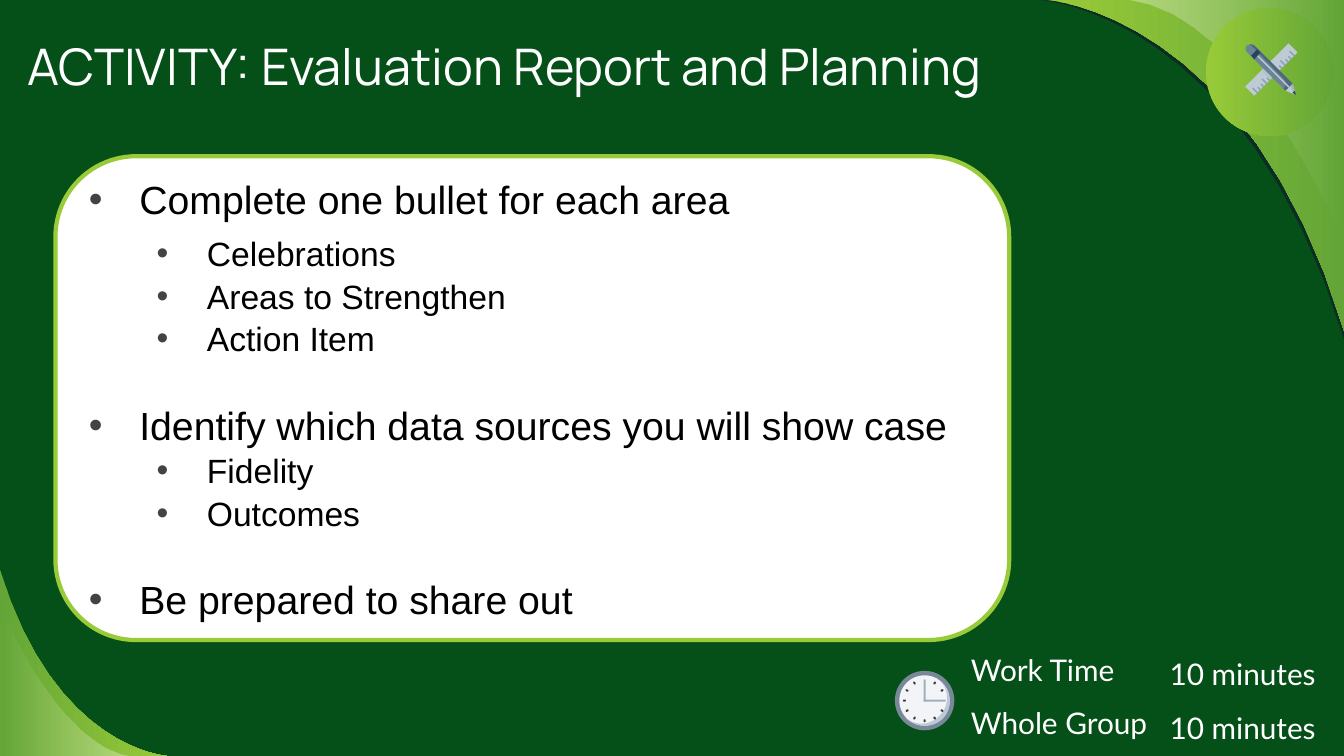
"""Build the activity slide with its task list, timing notes and icons."""
from lxml import etree
from math import cos, radians, sin
from pptx import Presentation
from pptx.dml.color import RGBColor
from pptx.enum.shapes import MSO_SHAPE
from pptx.enum.text import MSO_ANCHOR, MSO_AUTO_SIZE, PP_ALIGN
from pptx.oxml.ns import qn
from pptx.util import Inches, Pt

ELLIPSE, ROUNDED = MSO_SHAPE.OVAL, MSO_SHAPE.ROUNDED_RECTANGLE
TOP, MIDDLE = MSO_ANCHOR.TOP, MSO_ANCHOR.MIDDLE
LEFT, NO_AUTOFIT = PP_ALIGN.LEFT, MSO_AUTO_SIZE.NONE
WHITE, LIME, LEAF = "FFFFFF", "99CB38", "63A537"
CURVE_STEPS = 16


def paint(shape, colours, opacities=()):
    """Fill a shape with one colour or a left-to-right gradient, without an outline."""
    shape.shadow.inherit = False
    shape.line.fill.background()
    if len(colours) == 1:
        shape.fill.solid()
        shape.fill.fore_color.rgb = RGBColor.from_string(colours[0])
    else:
        shape.fill.gradient()
        shape.fill.gradient_angle = 0
        for stop, colour in zip(shape.fill.gradient_stops, colours):
            stop.color.rgb = RGBColor.from_string(colour)
    for colour_element, opacity in zip(shape.element.spPr.iter(qn("a:srgbClr")), opacities):
        etree.SubElement(colour_element, qn("a:alpha"), val=str(opacity * 1000))


def draw_outline(segments, colours, opacities=()):
    """Draw a closed outline from points (x, y) and cubic curves (x1, y1, x2, y2, x, y)."""
    points = [segments[0]]
    for segment in segments[1:]:
        if len(segment) == 2:
            points.append(segment)
            continue
        start, first, second, end = points[-1], segment[:2], segment[2:4], segment[4:]
        for step in range(1, CURVE_STEPS + 1):
            t = step / CURVE_STEPS
            points.append(tuple(
                (1 - t) ** 3 * a + 3 * (1 - t) ** 2 * t * b + 3 * (1 - t) * t ** 2 * c + t ** 3 * d
                for a, b, c, d in zip(start, first, second, end)))
    vertices = [(Inches(x), Inches(y)) for x, y in points]
    builder = slide.shapes.build_freeform(*vertices[0])
    builder.add_line_segments(vertices[1:], close=True)
    paint(builder.convert_to_shape(), colours, opacities)


presentation = Presentation()
presentation.slide_width, presentation.slide_height = Inches(13.33), Inches(7.5)
slide = presentation.slides.add_slide(presentation.slide_layouts[5])
slide.background.fill.solid()
slide.background.fill.fore_color.rgb = RGBColor.from_string("045018")

corner_swooshes = [
    ([(13.33, 3.37), (12.35, 0.11, 10.31, 0, 10.31, 0), (13.33, 0)], ["12102F"], [54]),
    ([(10.38, 0), (10.38, 0, 12.38, 0.11, 13.33, 3.28), (13.33, 0)], [LIME, LEAF], []),
    ([(13.33, 2.44), (13.33, 2.44, 12.42, 0.15, 11.18, 0), (13.33, 0)], [WHITE, WHITE], [36, 0]),
    ([(1.66, 7.5), (1.66, 7.5, 0.54, 7.44, 0, 5.65), (0, 7.5)], [LEAF, LIME], []),
    ([(0, 6.01), (0, 6.01, 0.56, 7.41, 1.32, 7.5), (0, 7.5)], [WHITE, WHITE], [0, 36]),
]
for segments, colours, opacities in corner_swooshes:
    draw_outline(segments, colours, opacities)

title = slide.shapes.title
title.left, title.top, title.width, title.height = Inches(0.17), Inches(0.25), Inches(11.46), Inches(0.92)
title_frame = title.text_frame
title_frame.text = "ACTIVITY: Evaluation Report and Planning"
title_frame.auto_size = NO_AUTOFIT
title_frame.vertical_anchor = TOP
title_frame.margin_top = title_frame.margin_bottom = Inches(0.1)
paragraph = title_frame.paragraphs[0]
paragraph.alignment = LEFT
paragraph.font.name, paragraph.font.size = "Manrope", Pt(36)
paragraph.font.color.rgb = RGBColor.from_string(WHITE)

badge = slide.shapes.add_shape(ELLIPSE, Inches(11.96), Inches(0.08), Inches(1.27), Inches(1.27))
paint(badge, [LIME, LEAF])

ruler = [(12.78, 0.43), (12.36, 0.85), (12.35, 0.86, 12.35, 0.87, 12.36, 0.87), (12.43, 0.94),
         (12.43, 0.95, 12.45, 0.95, 12.45, 0.94), (12.86, 0.53),
         (12.87, 0.52, 12.87, 0.51, 12.86, 0.51), (12.79, 0.44)]
draw_outline(ruler, ["BECBD5"])
for mark in range(13):
    x, y = 12.43 + 0.0305 * mark, 0.87 - 0.0305 * mark
    inset = 0.02 if mark % 3 else 0
    draw_outline([(x + inset, y + inset), (x + inset - 0.01, y + inset + 0.01),
                  (x + 0.04, y + 0.06), (x + 0.05, y + 0.05)], ["88A1B4"])

pencil_tip = (12.85, 0.94, 12.86, 0.93, 12.85, 0.93)
pencil_parts = [
    ([(12.58, 0.63), (12.51, 0.7), (12.6, 0.79), (12.67, 0.72)], "B2C2CE"),
    ([(12.41, 0.44), (12.39, 0.44, 12.38, 0.45, 12.37, 0.45), (12.35, 0.47, 12.35, 0.5, 12.37, 0.52),
      (12.75, 0.9), (12.82, 0.83), (12.44, 0.45)], "6B8397"),
    ([(12.82, 0.83), (12.75, 0.9), (12.85, 0.94), pencil_tip], "BECBD5"),
    ([(12.82, 0.83), (12.8, 0.85), (12.83, 0.93), (12.85, 0.94), pencil_tip], "9FB3C2"),
    ([(12.41, 0.44), (12.39, 0.44), (12.41, 0.45), (12.73, 0.78), (12.76, 0.81, 12.76, 0.85, 12.73, 0.88),
      (12.75, 0.9), (12.82, 0.83), (12.44, 0.45)], "4E677C"),
    ([(12.84, 0.9), (12.82, 0.92), (12.85, 0.94), pencil_tip], "29435D"),
    ([(12.47, 0.49), (12.41, 0.55), (12.44, 0.59), (12.5, 0.52)], "29435D"),
    ([(12.48, 0.55), (12.47, 0.56), (12.78, 0.87), (12.79, 0.86)], "BECBD5"),
]
for segments, colour in pencil_parts:
    draw_outline(segments, [colour])

task_card = slide.shapes.add_shape(ROUNDED, Inches(0.55), Inches(1.55), Inches(9.46), Inches(4.8))
paint(task_card, [WHITE])
task_card.line.color.rgb = RGBColor.from_string(LIME)
task_card.line.width = Pt(3)
task_frame = task_card.text_frame
task_frame.word_wrap = True
task_frame.vertical_anchor = MIDDLE
tasks = [
    (0, "Complete one bullet for each area", 0, 6),
    (1, "Celebrations", 0, 0),
    (1, "Areas to Strengthen", 0, 0),
    (1, "Action Item", 0, 0),
    (0, "Identify which data sources you will show case", 29, 0),
    (1, "Fidelity", 0, 0),
    (1, "Outcomes", 0, 0),
    (0, "Be prepared to share out", 29, 0),
]
for index, (level, text, space_before, space_after) in enumerate(tasks):
    paragraph = task_frame.add_paragraph() if index else task_frame.paragraphs[0]
    paragraph.text = text
    paragraph.level = level
    paragraph.alignment = LEFT
    paragraph.line_spacing = 1.05
    paragraph.space_before, paragraph.space_after = Pt(space_before), Pt(space_after)
    paragraph.font.name, paragraph.font.size = "Arial", Pt(24 if level else 28)
    paragraph.font.color.rgb = RGBColor.from_string("000000")
    properties = paragraph._p.get_or_add_pPr()
    properties.set("marL", str(Inches(1.17 if level else 0.5)))
    properties.set("indent", str(Inches(-0.5)))
    bullet_colour = etree.Element(qn("a:buClr"))
    etree.SubElement(bullet_colour, qn("a:srgbClr"), val="434343")
    bullet_font = etree.Element(qn("a:buFont"), typeface="Arial")
    bullet = etree.Element(qn("a:buChar"), char="•")
    position = properties.index(properties.find(qn("a:spcAft"))) + 1
    properties[position:position] = [bullet_colour, bullet_font, bullet]

clock_x, clock_y = 9.17, 6.95
for diameter, colour in [(0.59, "798898"), (0.5, "F2F4F7")]:
    disc = slide.shapes.add_shape(ELLIPSE, Inches(clock_x - diameter / 2), Inches(clock_y - diameter / 2),
                                  Inches(diameter), Inches(diameter))
    paint(disc, [colour])
draw_outline([(9.33, 6.76), (9.42, 6.86, 9.41, 7.01, 9.32, 7.1), (9.27, 7.15, 9.21, 7.18, 9.14, 7.18),
              (9.09, 7.18, 9.03, 7.16, 8.98, 7.12), (9.03, 7.17, 9.1, 7.2, 9.17, 7.2),
              (9.23, 7.2, 9.3, 7.18, 9.35, 7.13), (9.45, 7.03, 9.44, 6.86, 9.33, 6.76)], ["BCCAD6"])
hands = [(hour, 0.1, 0.22, "A3ADB8") for hour in (0, 3)]
hour_marks = [(hour, 0.2, 0.03, "3D3D3D") for hour in range(12) if hour not in (0, 3)]
for hour, radius, length, colour in hands + hour_marks:
    angle = radians(30 * hour)
    x, y = clock_x + radius * sin(angle), clock_y - radius * cos(angle)
    bar = slide.shapes.add_shape(ROUNDED, Inches(x - 0.01), Inches(y - length / 2), Inches(0.02), Inches(length))
    bar.adjustments[0] = 0.5
    bar.rotation = 30 * hour
    paint(bar, [colour])

timing_columns = [
    (11.25, 6.38, 2.08, 0.96, ["10 minutes", "10 minutes"], 1.5, 0),
    (9.28, 6.58, 2.65, 0.65, ["Work Time", "Whole Group"], 1, 12),
]
for left, top, width, height, lines, line_spacing, gap in timing_columns:
    box = slide.shapes.add_textbox(Inches(left), Inches(top), Inches(width), Inches(height))
    frame = box.text_frame
    frame.word_wrap = True
    frame.vertical_anchor = MIDDLE
    frame.margin_left = frame.margin_right = frame.margin_top = frame.margin_bottom = Inches(0.13)
    for index, text in enumerate(lines):
        paragraph = frame.add_paragraph() if index else frame.paragraphs[0]
        paragraph.text = text
        paragraph.line_spacing = line_spacing
        paragraph.space_before = Pt(gap * index)
        paragraph.font.name, paragraph.font.size = "Lato", Pt(21.3)
        paragraph.font.color.rgb = RGBColor.from_string(WHITE)
        paragraph._p.get_or_add_pPr().set("marL", str(Inches(0.22)))

presentation.save("out.pptx")
